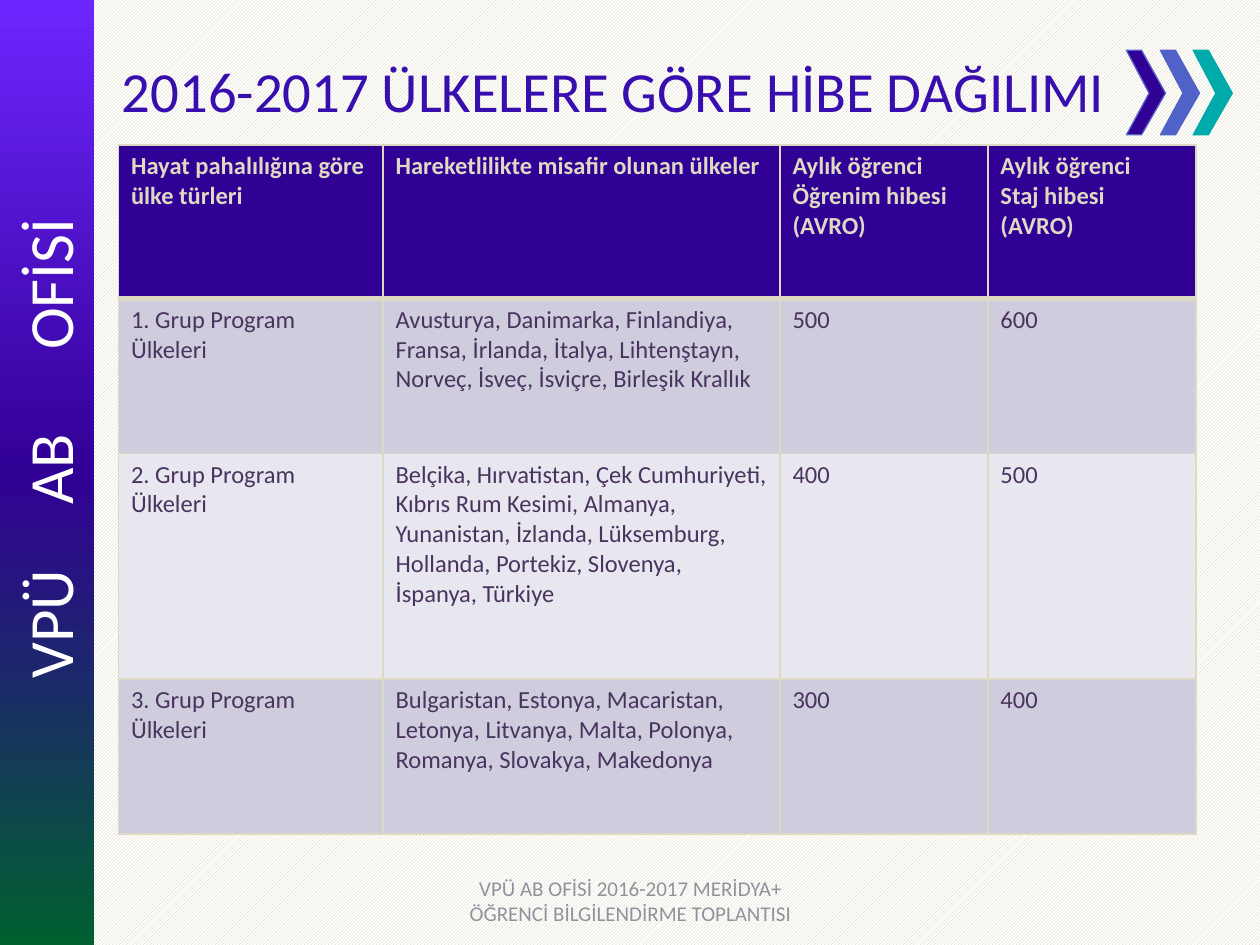
"""Builds the slide with the 2016-2017 grant distribution by country."""
import copy
from dataclasses import dataclass

import lxml.etree
import pptx
import pptx.dml.color
import pptx.enum.dml
import pptx.enum.shapes
import pptx.enum.text
import pptx.oxml.ns
import pptx.util

Inches = pptx.util.Inches
Pt = pptx.util.Pt
qn = pptx.oxml.ns.qn
Anchor = pptx.enum.text.MSO_ANCHOR
Align = pptx.enum.text.PP_ALIGN

FONT = "Calibri"
COLORS = {
    "violet": "6E26FF",
    "indigo": "310095",
    "green": "006030",
    "blue": "5061C8",
    "teal": "00AAAA",
    "title": "380EAE",
    "footer": "95909D",
    "sand": "DDD9C3",
    "hatch": "CEC8A8",
    "white": "FFFFFF",
    "body": "49345F",
    "odd": "CECCDD",
    "even": "E8E7EF",
}


@dataclass
class Label:
    text: str
    left: float
    top: float
    width: float
    height: float
    size: float
    color: str
    anchor: Anchor = Anchor.MIDDLE
    align: Align = Align.LEFT
    rotation: float = 0
    tabs: tuple = ()


@dataclass
class Chevron:
    left: float
    fill: str
    line: str


LABELS = [
    Label("VPÜ\tAB\tOFİSİ", -2.78, 2.08, 6.22, 0.59, 36, "white",
          anchor=Anchor.TOP, rotation=270, tabs=(1.38, 2.61)),
    Label("2016-2017 ÜLKELERE GÖRE HİBE DAĞILIMI",
          0.87, 0.09, 8.03, 1.25, 32.4, "title"),
    Label("VPÜ AB OFİSİ 2016-2017 MERİDYA+ ÖĞRENCİ BİLGİLENDİRME TOPLANTISI",
          3.42, 6.95, 3.17, 0.4, 12, "footer", align=Align.CENTER),
]
CHEVRONS = [
    Chevron(8.94, "indigo", "blue"),
    Chevron(9.21, "blue", "blue"),
    Chevron(9.47, "teal", "teal"),
]
COLUMN_WIDTHS = [2.1, 3.15, 1.65, 1.65]
ROW_HEIGHTS = [1.22, 1.23, 1.79, 1.23]
GRANTS = [
    ("Hayat pahalılığına göre ülke türleri",
     "Hareketlilikte misafir olunan ülkeler",
     "Aylık öğrenci Öğrenim hibesi (AVRO)",
     "Aylık öğrenci \vStaj hibesi (AVRO)"),
    ("1. Grup Program Ülkeleri",
     "Avusturya, Danimarka, Finlandiya, Fransa, İrlanda, İtalya, Lihtenştayn, "
     "Norveç, İsveç, İsviçre, Birleşik Krallık", "500", "600"),
    ("2. Grup Program Ülkeleri",
     "Belçika, Hırvatistan, Çek Cumhuriyeti, Kıbrıs Rum Kesimi, Almanya, "
     "Yunanistan, İzlanda, Lüksemburg, Hollanda, Portekiz, Slovenya, "
     "İspanya, Türkiye", "400", "500"),
    ("3. Grup Program Ülkeleri",
     "Bulgaristan, Estonya, Macaristan, Letonya, Litvanya, Malta, Polonya, "
     "Romanya, Slovakya, Makedonya", "300", "400"),
]


def rgb(name: str) -> pptx.dml.color.RGBColor:
    return pptx.dml.color.RGBColor.from_string(COLORS[name])


def format_runs(text_frame, size: float, color: str, bold: bool = False) -> None:
    for paragraph in text_frame.paragraphs:
        for run in paragraph.runs:
            run.font.name = FONT
            run.font.size = Pt(size)
            run.font.bold = bold
            run.font.color.rgb = rgb(color)


def draw_background(slide) -> None:
    fill = slide.background.fill
    fill.patterned()
    fill.pattern = pptx.enum.dml.MSO_PATTERN.LIGHT_UPWARD_DIAGONAL
    fill.fore_color.rgb = rgb("hatch")
    fill.back_color.rgb = rgb("white")


def draw_sidebar(slide) -> None:
    sidebar = slide.shapes.add_shape(
        pptx.enum.shapes.MSO_SHAPE.RECTANGLE, 0, 0, Inches(0.75), Inches(7.5))
    sidebar.shadow.inherit = False
    sidebar.line.fill.background()
    sidebar.fill.gradient()
    sidebar.fill.gradient_angle = 270
    stop_list = next(sidebar._element.iter(qn("a:gsLst")))
    stop_list.insert(1, copy.deepcopy(stop_list[0]))
    names = ("violet", "indigo", "green")
    for index, (stop, name) in enumerate(zip(sidebar.fill.gradient_stops, names)):
        stop.position = index / 2
        stop.color.rgb = rgb(name)


def draw_chevron(group, chevron: Chevron) -> None:
    left, top, middle, bottom = chevron.left, 0.4, 0.74, 1.07
    outline = [(left + 0.12, top), (left, top), (left + 0.18, middle),
               (left, bottom), (left + 0.12, bottom), (left + 0.31, middle)]
    points = [(Inches(x), Inches(y)) for x, y in outline]
    builder = group.shapes.build_freeform(*points[0])
    builder.add_line_segments(points[1:], close=True)
    shape = builder.convert_to_shape()
    shape.shadow.inherit = False
    shape.fill.solid()
    shape.fill.fore_color.rgb = rgb(chevron.fill)
    shape.line.color.rgb = rgb(chevron.line)
    shape.line.width = Pt(0.75)


def draw_label(slide, label: Label) -> None:
    shape = slide.shapes.add_textbox(
        Inches(label.left), Inches(label.top), Inches(label.width), Inches(label.height))
    shape.rotation = label.rotation
    text_frame = shape.text_frame
    text_frame.word_wrap = True
    text_frame.vertical_anchor = label.anchor
    text_frame.text = label.text
    paragraph = text_frame.paragraphs[0]
    paragraph.alignment = label.align
    if label.tabs:
        properties = paragraph._p.get_or_add_pPr()
        tab_list = lxml.etree.SubElement(properties, qn("a:tabLst"))
        for position in label.tabs:
            lxml.etree.SubElement(
                tab_list, qn("a:tab"), pos=str(Inches(position)), algn="l")
    format_runs(text_frame, label.size, label.color)


def draw_border(cell, side: str, width: float) -> None:
    properties = cell._tc.get_or_add_tcPr()
    line = lxml.etree.SubElement(properties, qn(f"a:ln{side}"), w=str(Pt(width)))
    fill = lxml.etree.SubElement(line, qn("a:solidFill"))
    lxml.etree.SubElement(fill, qn("a:srgbClr"), val=COLORS["sand"])


def draw_table(slide) -> None:
    table = slide.shapes.add_table(
        len(GRANTS), len(COLUMN_WIDTHS), Inches(0.94), Inches(1.15),
        Inches(sum(COLUMN_WIDTHS)), Inches(sum(ROW_HEIGHTS))).table
    for column, width in zip(table.columns, COLUMN_WIDTHS):
        column.width = Inches(width)
    for row_index, (row, texts) in enumerate(zip(table.rows, GRANTS)):
        row.height = Inches(ROW_HEIGHTS[row_index])
        header = row_index == 0
        fill = "indigo" if header else ("even", "odd")[row_index % 2]
        for cell, text in zip(row.cells, texts):
            for side in "LRTB":
                thick = (header and side == "B") or (row_index == 1 and side == "T")
                draw_border(cell, side, 3 if thick else 1)
            cell.fill.solid()
            cell.fill.fore_color.rgb = rgb(fill)
            cell.text_frame.text = text
            format_runs(cell.text_frame, 14, "sand" if header else "body", header)


def main() -> None:
    presentation = pptx.Presentation()
    presentation.slide_width = Inches(10)
    presentation.slide_height = Inches(7.5)
    slide = presentation.slides.add_slide(presentation.slide_layouts[6])
    draw_background(slide)
    draw_sidebar(slide)
    group = slide.shapes.add_group_shape()
    for chevron in CHEVRONS:
        draw_chevron(group, chevron)
    for label in LABELS:
        draw_label(slide, label)
    draw_table(slide)
    presentation.save("out.pptx")


if __name__ == "__main__":
    main()
